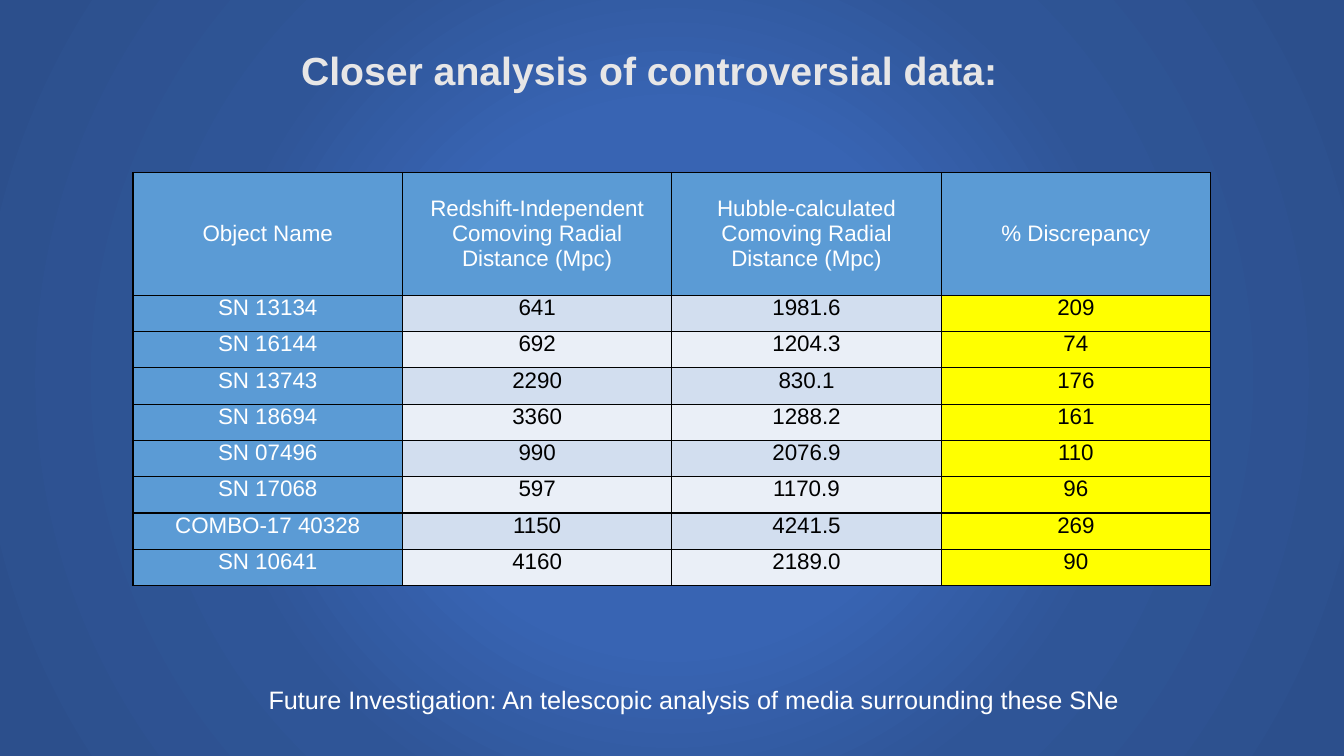
from dataclasses import dataclass
from typing import NamedTuple

from pptx import Presentation
from pptx.dml.color import RGBColor as Rgb
from pptx.enum.text import MSO_ANCHOR as Anchor, MSO_AUTO_SIZE as Fit, PP_ALIGN as Align
from pptx.oxml import parse_xml
from pptx.oxml.ns import nsdecls, qn
from pptx.shapes.base import BaseShape
from pptx.slide import Slide
from pptx.table import _Cell as Cell
from pptx.text.text import TextFrame
from pptx.util import Pt


@dataclass(frozen=True)
class Theme:
    font: str = "Arial"
    title_size: int = 28
    note_size: int = 18
    cell_size: int = 16
    title: str = "E7E6E6"
    light: str = "FFFFFF"
    dark: str = "000000"
    head: str = "5B9BD5"
    bands: tuple[str, str] = ("D2DEEF", "EAEFF7")
    mark: str = "FFFF00"
    glow: tuple[tuple[int, str], ...] = (
        (0, "3864B3"), (35, "3864B3"), (61, "2F5597"), (97, "2C4F8C"))


class Box(NamedTuple):
    left: float
    top: float
    width: float
    height: float


class Nova(NamedTuple):
    name: str
    direct: str
    hubble: str
    gap: str


THEME = Theme()
PAGE = (960, 540)
TITLE = Box(0, 0, 927.36, 82.8)
NOTE = Box(0, 475.2, 960, 37.44)
GRID = Box(95.04, 123.12, 769.68, 295.2)
HEAD_H, ROW_H = 87.84, 25.92

HEADS = Nova(
    "Object Name",
    "Redshift-Independent Comoving Radial Distance (Mpc)",
    "Hubble-calculated\nComoving Radial Distance (Mpc)",
    "% Discrepancy",
)
NOVAE = [
    Nova("SN 13134", "641", "1981.6", "209"),
    Nova("SN 16144", "692", "1204.3", "74"),
    Nova("SN 13743", "2290", "830.1", "176"),
    Nova("SN 18694", "3360", "1288.2", "161"),
    Nova("SN 07496", "990", "2076.9", "110"),
    Nova("SN 17068", "597", "1170.9", "96"),
    Nova("COMBO-17 40328", "1150", "4241.5", "269"),
    Nova("SN 10641", "4160", "2189.0", "90"),
]


def paint_back(slide: Slide) -> None:
    """Fill the background with a circular glow."""
    slide.background.fill.solid()
    props = slide.element.find(".//" + qn("p:bgPr"))
    stops = "".join(
        f'<a:gs pos="{at * 1000}"><a:srgbClr val="{tone}"/></a:gs>'
        for at, tone in THEME.glow)
    props.replace(props[0], parse_xml(
        f'<a:gradFill {nsdecls("a")} rotWithShape="1"><a:gsLst>{stops}</a:gsLst>'
        '<a:path path="circle"><a:fillToRect l="50000" t="50000" r="50000" b="50000"/>'
        "</a:path></a:gradFill>"))


def set_text(frame: TextFrame, text: str, size: int, tone: str, bold: bool = False) -> None:
    frame.text = text
    for para in frame.paragraphs:
        para.alignment = Align.CENTER
        font = para.font
        font.name, font.size, font.bold = THEME.font, Pt(size), bold
        font.color.rgb = Rgb.from_string(tone)


def place(shape: BaseShape, box: Box, fit: Fit) -> None:
    """Set the frame and spacing shared by the title and the note."""
    shape.left, shape.top, shape.width, shape.height = map(Pt, box)
    frame = shape.text_frame
    frame.word_wrap, frame.auto_size = True, fit
    frame.vertical_anchor = Anchor.MIDDLE
    frame.paragraphs[0].line_spacing = 1.5


def add_edges(cell: Cell) -> None:
    props = cell._tc.get_or_add_tcPr()
    for side in "LRTB":
        props.append(parse_xml(
            f'<a:ln{side} {nsdecls("a")} w="{Pt(1)}"><a:solidFill>'
            f'<a:srgbClr val="{THEME.dark}"/></a:solidFill></a:ln{side}>'))


def fill_cell(cell: Cell, text: str, row: int, col: int) -> None:
    is_head = row == 0 or col == 0
    if is_head:
        tone = THEME.head
    elif col == len(HEADS) - 1:
        tone = THEME.mark
    else:
        tone = THEME.bands[(row - 1) % 2]
    set_text(cell.text_frame, text, THEME.cell_size, THEME.light if is_head else THEME.dark)
    cell.vertical_anchor = Anchor.TOP if row else Anchor.MIDDLE
    cell.margin_left = cell.margin_right = Pt(5)
    cell.margin_top = cell.margin_bottom = 0
    add_edges(cell)
    cell.fill.solid()
    cell.fill.fore_color.rgb = Rgb.from_string(tone)


def add_grid(slide: Slide) -> None:
    rows = [HEADS, *NOVAE]
    table = slide.shapes.add_table(len(rows), len(HEADS), *map(Pt, GRID)).table
    for col in table.columns:
        col.width = Pt(GRID.width / len(HEADS))
    for r, nova in enumerate(rows):
        table.rows[r].height = Pt(ROW_H if r else HEAD_H)
        for c, text in enumerate(nova):
            fill_cell(table.cell(r, c), text, r, c)


def main() -> None:
    deck = Presentation()
    deck.slide_width, deck.slide_height = map(Pt, PAGE)
    slide = deck.slides.add_slide(deck.slide_layouts.get_by_name("Title Only"))
    paint_back(slide)

    # Title
    title = slide.shapes.title
    set_text(title.text_frame, "Closer analysis of controversial data:",
             THEME.title_size, THEME.title, bold=True)
    place(title, TITLE, Fit.NONE)

    # Closing note, with a first-line indent
    note = slide.shapes.add_textbox(*map(Pt, NOTE))
    set_text(note.text_frame,
             "Future Investigation: An telescopic analysis of media surrounding these SNe ",
             THEME.note_size, THEME.light)
    place(note, NOTE, Fit.SHAPE_TO_FIT_TEXT)
    note.text_frame.paragraphs[0]._p.get_or_add_pPr().set("indent", str(Pt(36)))

    # Distance table
    add_grid(slide)
    deck.save("out.pptx")


if __name__ == "__main__":
    main()
